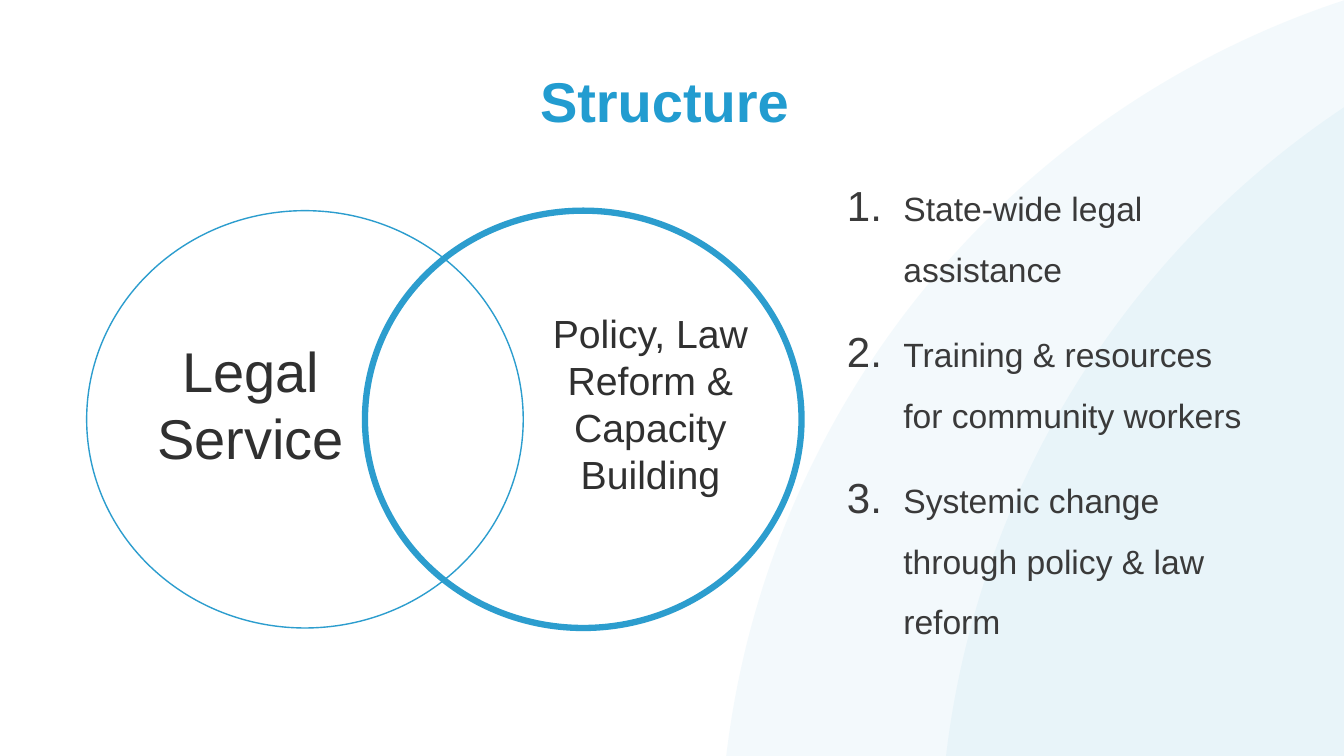
import pptx
import pptx.util
import pptx.dml.color
import pptx.enum.shapes
import pptx.enum.text
import pptx.oxml
import pptx.oxml.ns
from dataclasses import dataclass
from lxml import etree

Inches = pptx.util.Inches
Pt = pptx.util.Pt
Align = pptx.enum.text.PP_ALIGN
Anchor = pptx.enum.text.MSO_ANCHOR

TITLE = "Structure"
SERVICES = [
    "State-wide legal assistance",
    "Training & resources for community workers",
    "Systemic change through policy & law reform",
]
CIRCLES = [
    {"left": 0.86, "weight": 1, "label": "Legal Service", "size": 40,
     "label_at": (1.34, 3.29, 2.29, 1.45), "label_fill": "FFFFFF"},
    {"left": 3.62, "weight": 4.5, "label": "Policy, Law Reform & Capacity Building", "size": 28,
     "label_at": (5.19, 3.02, 2.52, 1.99), "label_fill": None},
]
CIRCLE_TOP, CIRCLE_WIDTH, CIRCLE_HEIGHT = 2.09, 4.33, 4.14
ARC_LEFTS, ARC_TOP, ARC_SIZE = (7.14, 9.32), -0.45, 18.02
NUMBER_INDENT = 0.56


@dataclass(frozen=True)
class Theme:
    font: str = "Arial"
    accent: str = "229CD0"
    ring: str = "2C9DCE"
    label: str = "303030"
    body: str = "3A3A3A"
    title_size: int = 40
    body_size: int = 24
    arc_alpha: int = 5


THEME = Theme()


def color(value):
    return pptx.dml.color.RGBColor.from_string(value)


def place(shape, left, top, width, height):
    shape.left, shape.top = Inches(left), Inches(top)
    shape.width, shape.height = Inches(width), Inches(height)


def add_ellipse(page, left, top, width, height):
    ellipse = page.shapes.add_shape(
        pptx.enum.shapes.MSO_SHAPE.OVAL,
        Inches(left), Inches(top), Inches(width), Inches(height))
    ellipse.shadow.inherit = False
    return ellipse


def write(para, text, *, size, ink, bold=False, align=Align.LEFT, spacing=None, after=0):
    para.alignment = align
    para.line_spacing = spacing
    para.space_before, para.space_after = Pt(0), Pt(after)
    span = para.add_run()
    span.text = text
    span.font.name = THEME.font
    span.font.size = Pt(size)
    span.font.bold = bold
    span.font.color.rgb = color(ink)


def number(para):
    properties = para._p.get_or_add_pPr()
    properties.set("marL", str(Inches(NUMBER_INDENT)))
    properties.set("indent", str(-Inches(NUMBER_INDENT)))
    etree.SubElement(properties, pptx.oxml.ns.qn("a:buSzPct"), val="125000")
    etree.SubElement(properties, pptx.oxml.ns.qn("a:buAutoNum"), type="arabicPeriod")


def add_arcs(page):
    for left in ARC_LEFTS:
        arc = add_ellipse(page, left, ARC_TOP, ARC_SIZE, ARC_SIZE)
        arc.line.fill.background()
        arc.fill.solid()
        arc.fill.fore_color.rgb = color(THEME.accent)
        shade = arc.element.find(".//" + pptx.oxml.ns.qn("a:srgbClr"))
        etree.SubElement(shade, pptx.oxml.ns.qn("a:alpha"), val=str(THEME.arc_alpha * 1000))
        page.slide_layout.shapes.element.append(arc.element)


def add_circle(page, circle):
    ring = add_ellipse(page, circle["left"], CIRCLE_TOP, CIRCLE_WIDTH, CIRCLE_HEIGHT)
    ring.fill.background()
    ring.line.color.rgb = color(THEME.ring)
    ring.line.width = Pt(circle["weight"])
    box = page.shapes.add_textbox(*map(Inches, circle["label_at"]))
    if circle["label_fill"]:
        box.fill.solid()
        box.fill.fore_color.rgb = color(circle["label_fill"])
    frame = box.text_frame
    frame.word_wrap = True
    frame.auto_size = pptx.enum.text.MSO_AUTO_SIZE.SHAPE_TO_FIT_TEXT
    write(frame.paragraphs[0], circle["label"], size=circle["size"],
          ink=THEME.label, align=Align.CENTER)


def fill_placeholder(holder, at, anchor):
    place(holder, *at)
    frame = holder.text_frame
    frame.word_wrap = True
    frame.auto_size = pptx.enum.text.MSO_AUTO_SIZE.NONE
    frame.vertical_anchor = anchor
    return frame


def main():
    deck = pptx.Presentation()
    deck.slide_width, deck.slide_height = Inches(13.33), Inches(7.5)
    page = deck.slides.add_slide(deck.slide_layouts[1])
    add_arcs(page)

    heading = fill_placeholder(page.shapes.title, (0.35, 0.69, 12.48, 1.22), Anchor.TOP)
    write(heading.paragraphs[0], TITLE, size=THEME.title_size, ink=THEME.accent,
          bold=True, align=Align.CENTER, spacing=0.9)

    for circle in CIRCLES:
        add_circle(page, circle)

    services = fill_placeholder(page.placeholders[1], (8.3, 1.61, 4.17, 4.81), Anchor.MIDDLE)
    for index, service in enumerate(SERVICES):
        para = services.add_paragraph() if index else services.paragraphs[0]
        write(para, service, size=THEME.body_size, ink=THEME.body, spacing=1.5, after=18)
        number(para)

    deck.save("out.pptx")


if __name__ == "__main__":
    main()
